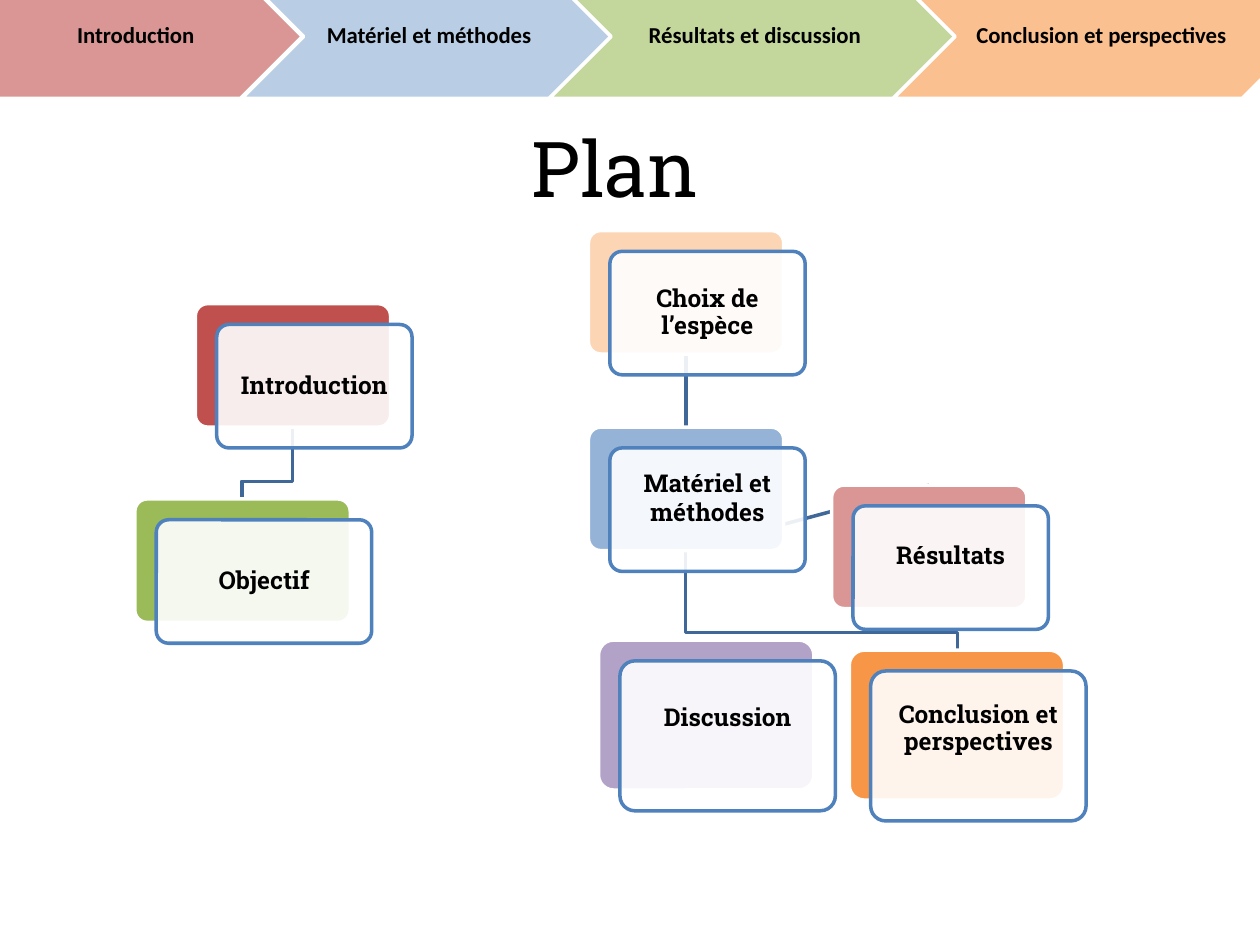
from lxml import etree
from pptx import Presentation
from pptx.dml.color import RGBColor
from pptx.enum.shapes import MSO_CONNECTOR, MSO_SHAPE
from pptx.enum.text import MSO_ANCHOR, PP_ALIGN
from pptx.oxml.ns import qn
from pptx.util import Inches, Pt

STRAIGHT = MSO_CONNECTOR.STRAIGHT
PENTAGON, CHEVRON = MSO_SHAPE.PENTAGON, MSO_SHAPE.CHEVRON
ROUNDED = MSO_SHAPE.ROUNDED_RECTANGLE
MIDDLE, CENTER = MSO_ANCHOR.MIDDLE, PP_ALIGN.CENTER
TOP, BOTTOM = 0, 2

COLORS = {
    "black": "000000", "white": "FFFFFF", "outline": "4F81BD", "link": "3F6797",
    "rose": "D99694", "pale blue": "B9CDE5", "pale green": "C3D69B",
    "pale orange": "FAC090", "red": "C0504D", "green": "9BBB59",
    "blue": "95B3D7", "peach": "FCD5B5", "orange": "F79646", "purple": "B3A2C7",
}


def add_box(kind, left, top, width, height, fill, line):
    box = slide.shapes.add_shape(
        kind, Inches(left), Inches(top), Inches(width), Inches(height))
    box.shadow.inherit = False
    box.fill.solid()
    box.fill.fore_color.rgb = RGBColor.from_string(COLORS[fill])
    box.line.color.rgb = RGBColor.from_string(COLORS[line])
    box.line.width = Pt(2)
    return box


def write_text(shape, text, font_name, size, bold, spacing, margins):
    """Write one centred paragraph; margins are left, top, right, bottom."""
    frame = shape.text_frame
    frame.word_wrap = True
    frame.vertical_anchor = MIDDLE
    for side, margin in zip(("left", "top", "right", "bottom"), margins):
        setattr(frame, f"margin_{side}", Inches(margin))
    paragraph = frame.paragraphs[0]
    paragraph.alignment = CENTER
    paragraph.line_spacing = spacing
    run = paragraph.add_run()
    run.text = text
    for name, value in {"name": font_name, "size": Pt(size), "bold": bold}.items():
        setattr(run.font, name, value)
    run.font.color.rgb = RGBColor.from_string(COLORS["black"])


presentation = Presentation()
presentation.slide_width = Inches(10)
presentation.slide_height = Inches(7.5)
slide = presentation.slides.add_slide(presentation.slide_layouts[5])

title = slide.shapes.title
title.left, title.top = Inches(2.65), Inches(0.78)
title.width, title.height = Inches(4.46), Inches(1.08)
write_text(title, "Plan", "Roboto Slab", 44, False, 1.0, (0.1, 0.05, 0.1, 0.05))

# Progress band: text, shape, left, width, colour
steps = [
    ("Introduction", PENTAGON, -0.04, 2.44, "rose"),
    ("Matériel et méthodes", CHEVRON, 1.92, 2.93, "pale blue"),
    ("Résultats et discussion", CHEVRON, 4.36, 3.22, "pale green"),
    ("Conclusion et perspectives", CHEVRON, 7.09, 3.26, "pale orange"),
]
for text, kind, left, width, color in steps:
    step = add_box(kind, left, -0.2, width, 0.98, color, "white")
    write_text(step, text, "Calibri", 13, True, 0.9, (0.06, 0.04, 0.02, 0.04))

# Links lie behind the cards; the straight ones are joined once the cards exist
elbows = [
    [(5.44, 4.37), (5.44, 5.02), (7.6, 5.02), (7.6, 5.16)],
    [(2.32, 3.39), (2.32, 3.82), (1.92, 3.82), (1.92, 3.96)],
]
links = []
for points in elbows:
    corners = [(Inches(x), Inches(y)) for x, y in points]
    builder = slide.shapes.build_freeform(*corners[0])
    builder.add_line_segments(corners[1:], close=False)
    elbow = builder.convert_to_shape()
    elbow.fill.background()
    elbow.shadow.inherit = False
    links.append(elbow)

targets = ["Choix de l’espèce", "Résultats"]
connectors = [slide.shapes.add_connector(STRAIGHT, 0, 0, 0, 0) for _ in targets]
for connector in connectors:
    etree.SubElement(connector._element.spPr, qn("a:effectLst"))
    links.append(connector)

for link in links:
    link.line.color.rgb = RGBColor.from_string(COLORS["link"])
    link.line.width = Pt(2)

# Cards: text, left, top, width, height, colour, line spacing, extra bottom margin
cards = [
    ("Introduction", 1.55, 2.41, 1.55, 0.98, "red", 0.9, 0),
    ("Objectif", 1.07, 3.96, 1.71, 0.98, "green", 0.9, 0),
    ("Matériel et méthodes", 4.67, 3.39, 1.55, 0.98, "blue", 1.0, 0.2),
    ("Résultats", 6.6, 3.85, 1.55, 0.98, "rose", 1.0, 0.2),
    ("Choix de l’espèce", 4.67, 1.83, 1.55, 0.98, "peach", 0.9, 0),
    ("Conclusion et perspectives", 6.74, 5.16, 1.71, 1.19, "orange", 0.9, 0.27),
    ("Discussion", 4.75, 5.08, 1.71, 1.19, "purple", 0.9, 0.28),
]
backs = {}
for text, left, top, width, height, color, spacing, extra in cards:
    back = add_box(ROUNDED, left, top, width, height, color, "white")
    front = add_box(ROUNDED, left + 0.17, top + 0.165, width, height,
                    "white", "outline")
    for card in (back, front):
        card.adjustments[0] = 0.1
    fill_color = front._element.spPr.find(qn("a:solidFill"))[0]
    etree.SubElement(fill_color, qn("a:alpha"), val="90000")
    write_text(front, text, "Roboto Slab", 14, True, spacing,
               (0.09, 0.09, 0.09, 0.09 + extra))
    backs[text] = back

for connector, target in zip(connectors, targets):
    connector.begin_connect(backs["Matériel et méthodes"], BOTTOM)
    connector.end_connect(backs[target], TOP)

presentation.save("out.pptx")
